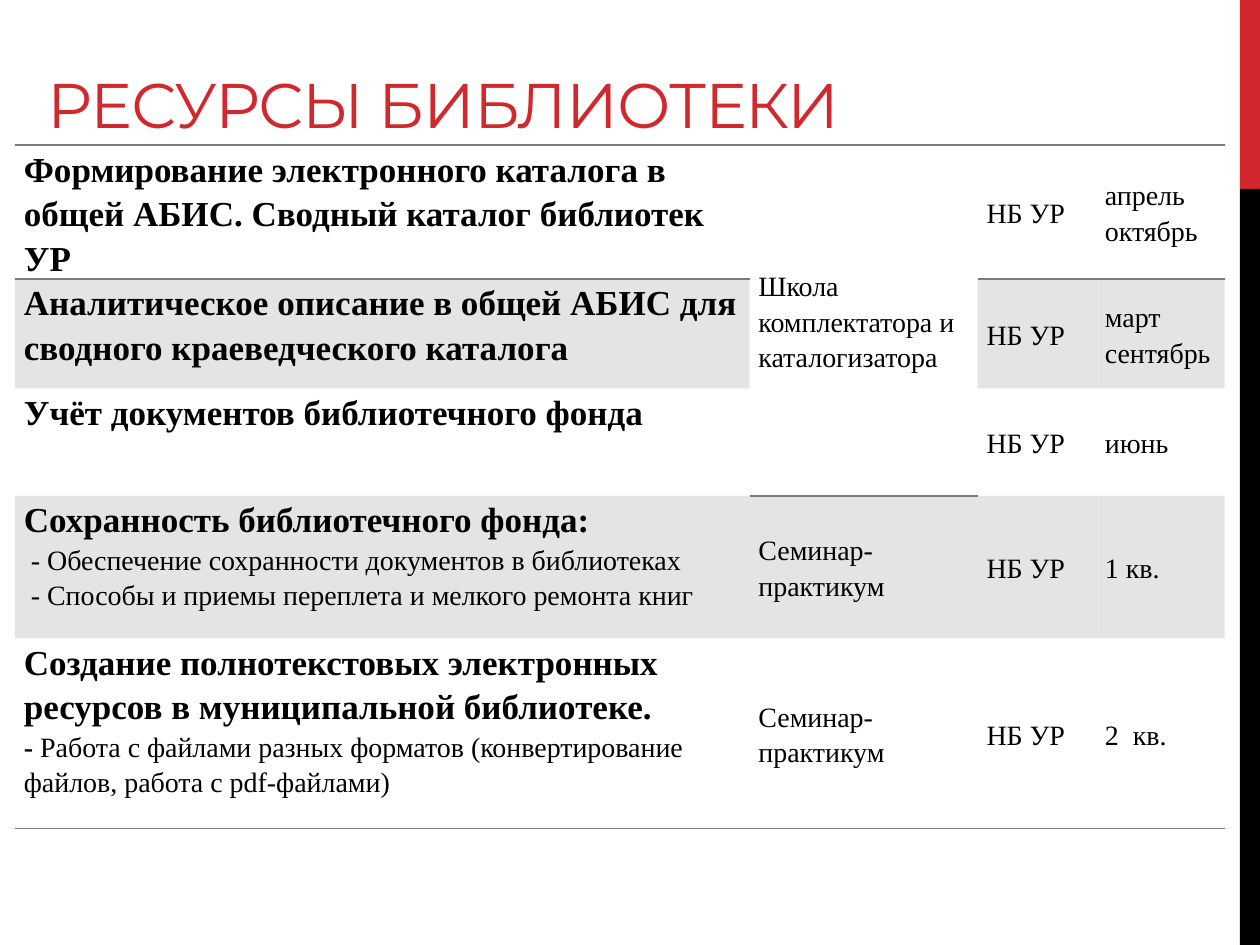
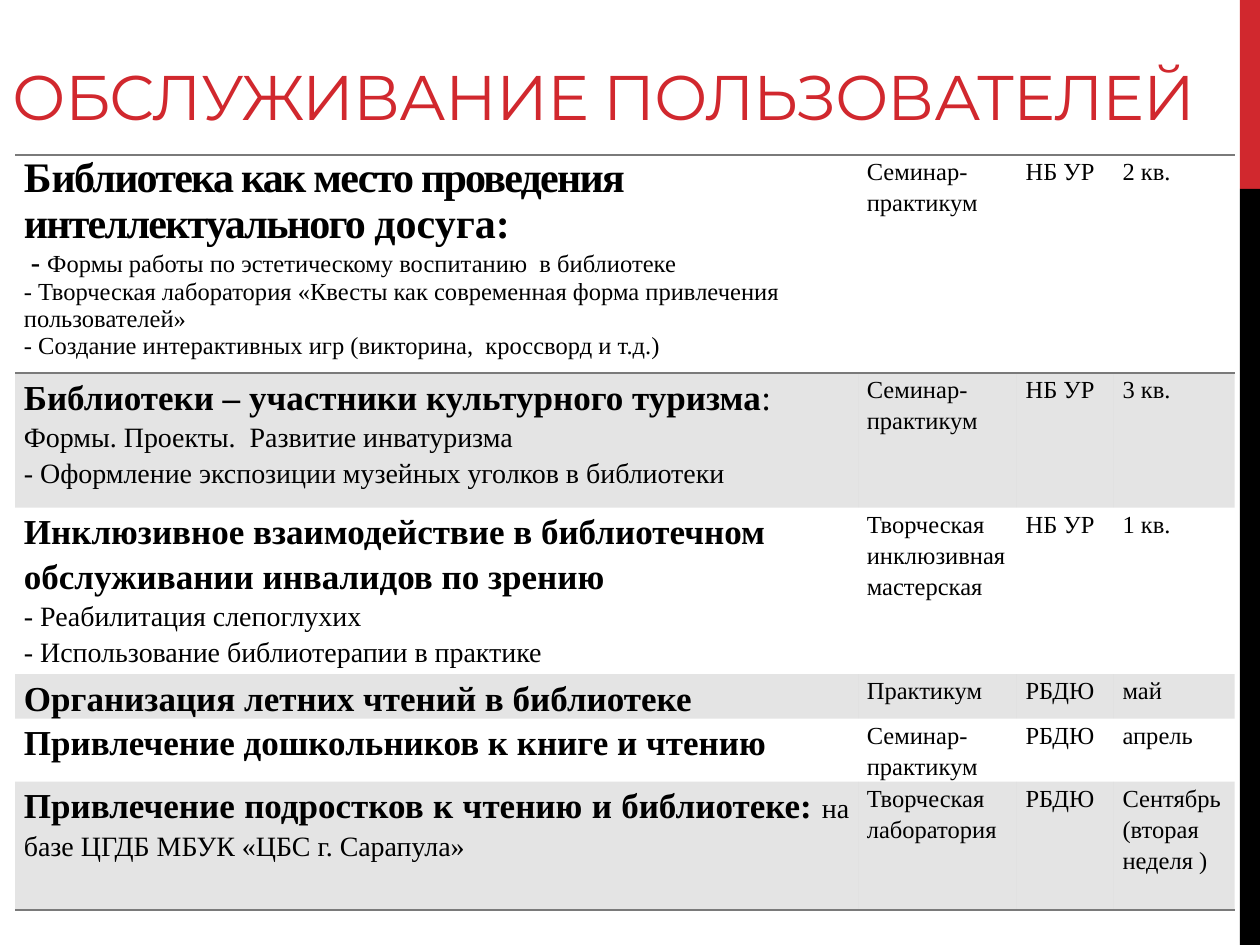
from lxml import etree
from pptx import Presentation
from pptx import util as u
from pptx.dml.color import RGBColor
from pptx.enum import shapes, text
from pptx.oxml import ns

COLORS = {"red": "D1282E", "black": "000000", "gray": "7A7A7A"}
TITLE_FONT, BODY_FONT = "Montserrat", "Times New Roman"
WIDTH, HEIGHT = u.Inches(10), u.Inches(7.5)
COLUMN, ROW = WIDTH / 100, HEIGHT / 75
PLAIN_TABLE = "{2D5ABB26-0587-4C30-8999-92F81FD0307C}"


def rgb(name):
    """Return a palette colour."""
    return RGBColor.from_string(COLORS[name])


def across(columns):
    """Convert grid columns to a length."""
    return u.Emu(round(columns * COLUMN))


def down(rows):
    """Convert grid rows to a length."""
    return u.Emu(round(rows * ROW))


def head(words, size=20, spacing=0):
    """Describe a bold run."""
    return words, size, True, spacing


def note(words, size=16):
    """Describe a regular run."""
    return words, size, False, 0


def add_run(paragraph, words, size, bold, spacing, font=BODY_FONT, color="black"):
    """Add one formatted run, with letter spacing in points."""
    run = paragraph.add_run()
    run.text = words
    run.font.name, run.font.size, run.font.bold = font, u.Pt(size), bold
    run.font.color.rgb = rgb(color)
    if spacing:
        run._r.get_or_add_rPr().set("spc", str(round(spacing * 100)))


def add_side_bands(presentation, slide):
    """Draw the right-hand bands and move them to the master."""
    tree = presentation.slide_master.element.cSld.spTree
    for color, top, height in (("red", 0, 15), ("black", 15, 60)):
        band = slide.shapes.add_shape(
            shapes.MSO_SHAPE.RECTANGLE, across(98.4), down(top), across(1.6), down(height))
        band.shadow.inherit = False
        band.fill.solid()
        band.fill.fore_color.rgb = rgb(color)
        band.line.fill.background()
        tree.append(band.element)


def set_title(slide, words, left, top, width):
    """Place and format the title placeholder."""
    title = slide.shapes.title
    title.left, title.top = across(left), down(top)
    title.width, title.height = across(width), down(7.7)
    frame = title.text_frame
    frame.auto_size, frame.word_wrap = text.MSO_AUTO_SIZE.NONE, True
    frame.vertical_anchor = text.MSO_ANCHOR.BOTTOM
    frame.margin_bottom = u.Inches(0.01)
    paragraph = frame.paragraphs[0]
    paragraph.alignment = text.PP_ALIGN.LEFT
    add_run(paragraph, words, 36, False, -0.6, TITLE_FONT, "red")


def add_border(cell, side):
    """Add a thin gray border to the given side of a cell."""
    line = etree.Element(ns.qn(f"a:ln{side}"), w=str(u.Pt(1)))
    fill = etree.SubElement(line, ns.qn("a:solidFill"))
    etree.SubElement(fill, ns.qn("a:srgbClr"), val=COLORS["gray"])
    cell._tc.get_or_add_tcPr().insert(0, line)


def style_cell(cell, index, last):
    """Shade odd rows and rule the first row and the bottom of the table."""
    if index % 2:
        cell.fill.solid()
        cell.fill.fore_color.rgb = rgb("gray")
        color = cell._tc.tcPr.find(".//" + ns.qn("a:srgbClr"))
        etree.SubElement(color, ns.qn("a:alpha"), val="20000")
    else:
        cell.fill.background()
    if index in (0, last):
        add_border(cell, "B")
    if index == 0:
        add_border(cell, "T")


def fill_cell(cell, paragraphs, anchor, line_spacing, alignment):
    """Write the paragraphs of a cell run by run."""
    cell.margin_left = cell.margin_right = u.Inches(0.07)
    cell.margin_top = cell.margin_bottom = 0
    cell.vertical_anchor = anchor
    frame = cell.text_frame
    for index, runs in enumerate(paragraphs):
        paragraph = frame.add_paragraph() if index else frame.paragraphs[0]
        paragraph.line_spacing = line_spacing
        paragraph.alignment = alignment
        for run in runs:
            add_run(paragraph, *run)


def add_plan(slide, left, top, columns, rows, plan, side_size, side_anchor,
             merged=None, single_rows=(), justified_rows=()):
    """Build the event table: topic, form, organiser and date."""
    frame = slide.shapes.add_table(
        len(rows), len(columns), across(left), down(top), across(sum(columns)), down(sum(rows)))
    table = frame.table
    table.first_row = table.horz_banding = False
    frame.element.xpath(".//a:tableStyleId")[0].text = PLAIN_TABLE
    for column, width in zip(table.columns, columns):
        column.width = across(width)
    for row, height in zip(table.rows, rows):
        row.height = down(height)
    if merged:
        first, final = merged
        table.cell(*first).merge(table.cell(*final))
    for index, (topic, *details) in enumerate(plan):
        alignment = text.PP_ALIGN.JUSTIFY if index in justified_rows else text.PP_ALIGN.LEFT
        for position in range(len(columns)):
            cell = table.cell(index, position)
            if cell.is_spanned:
                cell.fill.background()
                continue
            style_cell(cell, index, len(rows) - 1)
            if position == 0:
                spacing = 1.0 if index in single_rows else 1.15
                fill_cell(cell, topic, text.MSO_ANCHOR.TOP, spacing, alignment)
            else:
                lines = [[note(line, side_size)] for line in details[position - 1].split("\n")]
                fill_cell(cell, lines, side_anchor, 1.15, alignment)


def build_resources(slide):
    """Build the slide on library resources."""
    set_title(slide, "РЕСУРСЫ БИБЛИОТЕКИ", 2.8, 3.6, 96.1)
    plan = [
        ([[head("Формирование электронного каталога в общей АБИС. Сводный каталог библиотек УР")]],
         "Школа комплектатора и каталогизатора", "НБ УР", "апрель октябрь"),
        ([[head("Аналитическое описание в общей АБИС для сводного краеведческого каталога")]],
         "", "НБ УР", "март сентябрь"),
        ([[head("Учёт документов библиотечного фонда")]], "", "НБ УР", "июнь"),
        ([[head("Сохранность библиотечного фонда:")],
          [note(" - Обеспечение сохранности документов в библиотеках")],
          [note(" - Способы и приемы переплета и мелкого ремонта книг")]],
         "Семинар-практикум", "НБ УР", "1 кв."),
        ([[head("Создание полнотекстовых электронных ресурсов в муниципальной библиотеке.")],
          [head("- ", 16), note("Работа с файлами разных форматов (конвертирование файлов, "
                                "работа с pdf-файлами)")]],
         "Семинар-практикум", "НБ УР", "2  кв."),
    ]
    add_plan(slide, 1.2, 11.5, (58.3, 18.1, 9.4, 10.2), (10.6, 8.7, 8.5, 11.3, 15.1), plan,
             16, text.MSO_ANCHOR.MIDDLE, merged=((0, 1), (2, 1)))


def build_services(slide):
    """Build the slide on user services."""
    set_title(slide, "ОБСЛУЖИВАНИЕ ПОЛЬЗОВАТЕЛЕЙ", 0, 3, 104.3)
    plan = [
        ([[head("Б", 24), head("иблиотека как место проведения интеллектуального ", 24, -1),
           head("досуга:", 24)],
          [head(" - ", 16), note("Формы работы по эстетическому воспитанию  в библиотеке", 14)],
          [note("- Творческая лаборатория «Квесты как современная форма привлечения "
                "пользователей»", 14)],
          [note("- Создание интерактивных игр (викторина,  кроссворд и т.д.)", 14)]],
         "Семинар-практикум", "НБ УР", "2 кв."),
        ([[head("Библиотеки – участники культурного туризма"), note(": ", 20),
           note("Формы. Проекты.  Развитие инватуризма")],
          [note("- Оформление экспозиции музейных уголков в библиотеки")]],
         "Семинар-практикум", "НБ УР", "3 кв."),
        ([[head("Инклюзивное взаимодействие в библиотечном обслуживании инвалидов по зрению")],
          [note("- Реабилитация слепоглухих")],
          [note("- Использование библиотерапии в практике")]],
         "Творческая инклюзивная мастерская", "НБ УР", "1 кв."),
        ([[head("Организация летних чтений в библиотеке")]], "Практикум", "РБДЮ", "май"),
        ([[head("Привлечение дошкольников к книге и чтению")]],
         "Семинар-практикум", "РБДЮ", "апрель"),
        ([[head("Привлечение подростков к чтению и библиотеке: "),
           note("на базе ЦГДБ МБУК «ЦБС г. Сарапула»")]],
         "Творческая лаборатория", "РБДЮ", "Сентябрь\n(вторая неделя )"),
    ]
    add_plan(slide, 1.2, 12.3, (66.9, 12.6, 7.7, 9.6), (17.3, 10.7, 13.2, 3.5, 5, 10.2), plan,
             14, text.MSO_ANCHOR.TOP, single_rows=(0,), justified_rows=(3, 4, 5))


def main():
    """Build and save the presentation."""
    presentation = Presentation()
    presentation.slide_width, presentation.slide_height = WIDTH, HEIGHT
    title_only = presentation.slide_layouts[5]
    for index, build in enumerate((build_resources, build_services)):
        slide = presentation.slides.add_slide(title_only)
        if index == 0:
            add_side_bands(presentation, slide)
        build(slide)
    presentation.save("out.pptx")


if __name__ == "__main__":
    main()
